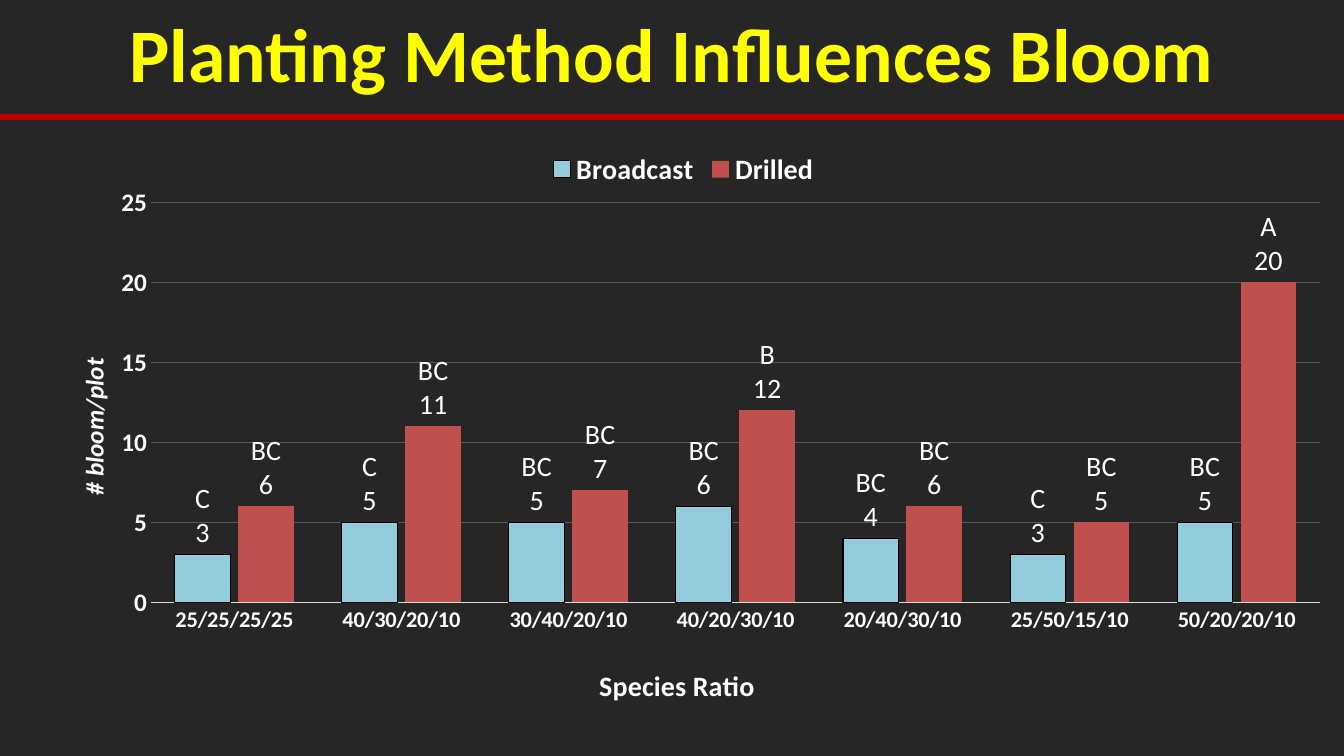
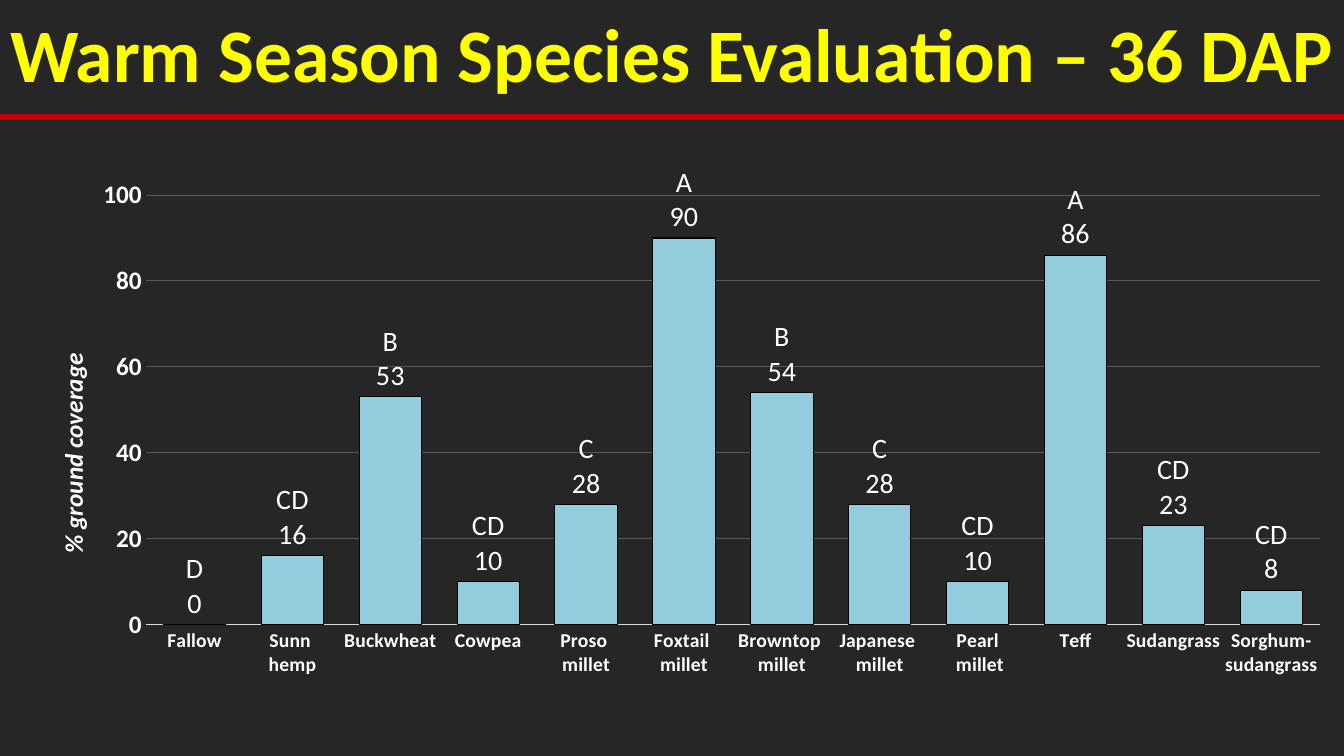
from lxml import etree
from pptx import Presentation
from pptx import util as u
from pptx.chart.data import CategoryChartData
from pptx.dml.color import RGBColor
from pptx.enum import chart as charts, shapes, text
from pptx.oxml.ns import qn

BACKGROUND, YELLOW, RED, WHITE = "262626", "FFFF00", "C00000", "FFFFFF"
AXIS_GRAY, GRID_GRAY, BLACK = "D9D9D9", "595959", "000000"
SERIES_STYLES = [("93CDDD", BLACK), ("C0504D", None)]
FONT = "Calibri"
WIDTH, HEIGHT, HEADER = 13.33, 7.5, 1.16


def color(value):
    """Turn a hex string into a colour."""
    return RGBColor.from_string(value)


def set_attributes(target, values):
    """Set every attribute named in a dict."""
    for name, value in values.items():
        setattr(target, name, value)


def set_font(font, size, fill=WHITE, bold=True, italic=False):
    """Format a font in the deck's typeface."""
    set_attributes(font, {"name": FONT, "size": u.Pt(size), "bold": bold, "italic": italic})
    font.color.rgb = color(fill)


def set_line(line, fill, width=0.75):
    """Draw a solid line, or none when there is no colour."""
    if fill is None:
        line.fill.background()
    else:
        line.color.rgb = color(fill)
        line.width = u.Pt(width)


def set_layout(parent, index, values):
    """Place a chart part by fractions of the chart area."""
    previous = parent.find(qn("c:layout"))
    if previous is not None:
        parent.remove(previous)
    layout = etree.Element(qn("c:layout"))
    manual = etree.SubElement(layout, qn("c:manualLayout"))
    for name, value in values.items():
        etree.SubElement(manual, qn(f"c:{name}")).set("val", str(value))
    parent.insert(index, layout)


class Deck:
    """Hold the presentation, its style and the current slide."""

    def __init__(self):
        """Start a presentation with a dark background."""
        self.presentation = Presentation()
        set_attributes(self.presentation,
                       {"slide_width": u.Inches(WIDTH), "slide_height": u.Inches(HEIGHT)})
        fill = self.presentation.slide_master.background.fill
        fill.solid()
        fill.fore_color.rgb = color(BACKGROUND)
        self.slide = None

    def add_slide(self, title):
        """Add a slide with its title and the rule below it."""
        self.slide = self.presentation.slides.add_slide(self.presentation.slide_layouts[5])
        shape = self.slide.shapes.title
        set_attributes(shape, {"left": 0, "top": 0, "width": u.Inches(WIDTH),
                               "height": u.Inches(HEADER)})
        frame = shape.text_frame
        frame.text = title
        set_attributes(frame, {"word_wrap": True, "auto_size": text.MSO_AUTO_SIZE.NONE,
                               "vertical_anchor": text.MSO_ANCHOR.MIDDLE,
                               "margin_left": 0, "margin_right": 0})
        paragraph = frame.paragraphs[0]
        set_attributes(paragraph, {"alignment": text.PP_ALIGN.CENTER, "line_spacing": 0.9})
        set_font(paragraph.runs[0].font, 54, YELLOW)
        self.add_rule(HEADER)

    def add_rule(self, top):
        """Draw a rule across the slide."""
        rule = self.slide.shapes.add_connector(
            shapes.MSO_CONNECTOR.STRAIGHT, 0, u.Inches(top), u.Inches(WIDTH), u.Inches(top))
        set_line(rule.line, RED, 4.5)
        etree.SubElement(rule._element.spPr, qn("a:effectLst"))

    def add_columns(self, box, categories, series, plot_box, gap, overlap, maximum, step):
        """Add a column chart; each series maps a name to (letters, value) pairs."""
        data = CategoryChartData()
        data.categories = categories
        for name, points in series.items():
            data.add_series(name, [value for _, value in points])
        chart = self.slide.shapes.add_chart(
            charts.XL_CHART_TYPE.COLUMN_CLUSTERED, *map(u.Inches, box), data).chart
        set_attributes(chart, {"has_title": False, "has_legend": len(series) > 1})
        set_font(chart.font, 10, BLACK, bold=False)
        if chart.has_legend:
            set_attributes(chart.legend, {"position": charts.XL_LEGEND_POSITION.TOP,
                                          "include_in_layout": False})
            set_font(chart.legend.font, 20)
        plot = chart.plots[0]
        set_attributes(plot, {"gap_width": gap, "overlap": overlap, "vary_by_categories": False})
        for item, points, style in zip(plot.series, series.values(), SERIES_STYLES):
            self.format_series(item, points, *style)
        set_attributes(chart.value_axis, {"minimum_scale": 0, "maximum_scale": maximum,
                                          "major_unit": step, "has_major_gridlines": True})
        set_line(chart.value_axis.major_gridlines.format.line, GRID_GRAY)
        set_layout(chart._chartSpace.chart.plotArea, 0,
                   {"layoutTarget": "inner", "xMode": "edge", "yMode": "edge",
                    **dict(zip("xywh", plot_box))})
        return chart

    def format_series(self, series, points, fill, outline):
        """Colour a series and label its columns with letters and value."""
        series.format.fill.solid()
        series.format.fill.fore_color.rgb = color(fill)
        set_line(series.format.line, outline)
        position = charts.XL_LABEL_POSITION.OUTSIDE_END
        set_attributes(series.data_labels, {"show_value": True, "position": position})
        set_font(series.data_labels.font, 20)
        for index, (letters, value) in enumerate(points):
            label = series.points[index].data_label
            label.text_frame.text = f"{letters}\n{value}"
            for paragraph in label.text_frame.paragraphs:
                set_font(paragraph.runs[0].font, 20, bold=False)
            label.position = position

    def format_axis(self, axis, size, line=None):
        """Format the labels and line of an axis."""
        set_attributes(axis, {"major_tick_mark": charts.XL_TICK_MARK.NONE,
                              "minor_tick_mark": charts.XL_TICK_MARK.NONE})
        set_font(axis.tick_labels.font, size)
        set_line(axis.format.line, line)

    def add_axis_title(self, axis, title, size, left, top, upright=False):
        """Title an axis at a place in the chart, turned when upright."""
        frame = axis.axis_title.text_frame
        frame.text = title
        set_font(frame.paragraphs[0].runs[0].font, size, italic=upright)
        if upright:
            frame._txBody.find(qn("a:bodyPr")).set("rot", "-5400000")
        set_layout(axis.axis_title._element, 1,
                   {"xMode": "edge", "yMode": "edge", "x": left, "y": top})


def main():
    """Build and save the deck."""
    deck = Deck()

    deck.add_slide("Planting Method Influences Bloom")
    ratios = ["25/25/25/25", "40/30/20/10", "30/40/20/10", "40/20/30/10",
              "20/40/30/10", "25/50/15/10", "50/20/20/10"]
    blooms = {
        "Broadcast": [("C", 3), ("C", 5), ("BC", 5), ("BC", 6), ("BC", 4), ("C", 3), ("BC", 5)],
        "Drilled": [("BC", 6), ("BC", 11), ("BC", 7), ("B", 12), ("BC", 6), ("BC", 5), ("A", 20)],
    }
    chart = deck.add_columns((0.46, 1.38, 12.64, 5.75), ratios, blooms,
                             (0.082, 0.109, 0.918, 0.69), 86, -14, 25, 5)
    deck.format_axis(chart.category_axis, 16, AXIS_GRAY)
    deck.format_axis(chart.value_axis, 18)
    deck.add_axis_title(chart.category_axis, "Species Ratio", 20, 0.43, 0.9)
    deck.add_axis_title(chart.value_axis, "# bloom/plot", 18, 0.02, 0.37, upright=True)

    deck.add_slide("Warm Season Species Evaluation – 36 DAP")
    coverage = {
        "Fallow": ("D", 0), "Sunn \nhemp": ("CD", 16), "Buckwheat": ("B", 53),
        "Cowpea": ("CD", 10), "Proso \nmillet": ("C", 28), "Foxtail \nmillet": ("A", 90),
        "Browntop \nmillet": ("B", 54), "Japanese \nmillet": ("C", 28),
        "Pearl\n millet": ("CD", 10), "Teff": ("A", 86), "Sudangrass": ("CD", 23),
        "Sorghum-\nsudangrass": ("CD", 8),
    }
    chart = deck.add_columns((0.25, 1.3, 12.85, 5.83), list(coverage),
                             {"Series 1": list(coverage.values())},
                             (0.093, 0.109, 0.907, 0.731), 57, -17, 100, 20)
    deck.format_axis(chart.category_axis, 14, AXIS_GRAY)
    deck.format_axis(chart.value_axis, 18)
    deck.add_axis_title(chart.value_axis, "% ground coverage", 18, 0.02, 0.37, upright=True)

    deck.presentation.save("out.pptx")


if __name__ == "__main__":
    main()
